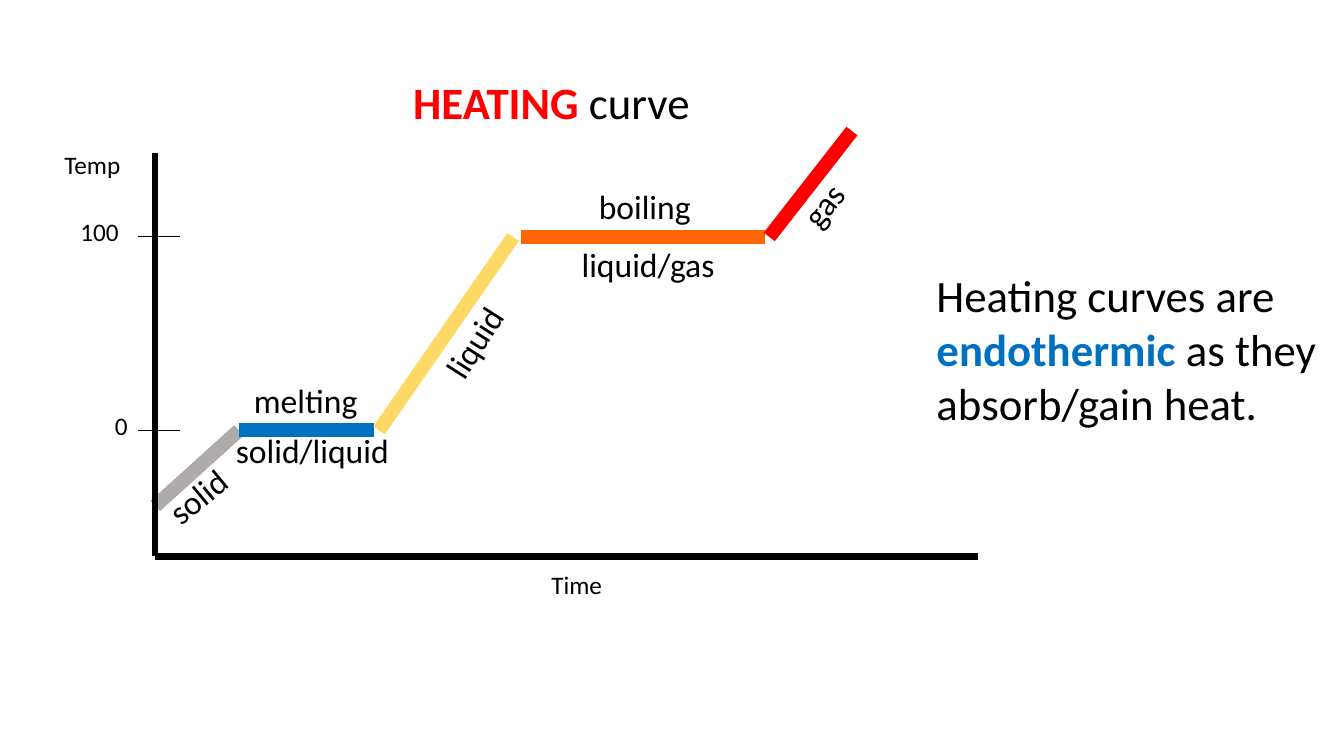
import pptx
import pptx.util
import pptx.dml.color
import pptx.enum.shapes
import pptx.enum.text
import pptx.oxml.ns
import lxml.etree
from pptx.util import Inches

FONT = "Calibri"
COLORS = {
    "black": "000000", "solid": "AFABAB", "melting": "0070C0",
    "liquid": "FFD966", "boiling": "FF6600", "gas": "FF0000",
}


def rgb(name):
    return pptx.dml.color.RGBColor.from_string(COLORS[name])


def add_line(s, start, end, color, width):
    line = s.shapes.add_connector(
        pptx.enum.shapes.MSO_CONNECTOR.STRAIGHT,
        *(Inches(v) for v in (*start, *end)))
    line.line.color.rgb = rgb(color)
    line.line.width = pptx.util.Pt(width)
    lxml.etree.SubElement(line._element.spPr, pptx.oxml.ns.qn("a:effectLst"))


def add_text(s, box, runs, size, wrap=False, rotation=0):
    """Add one paragraph; each run is (text, color name, bold)."""
    sp = s.shapes.add_textbox(*(Inches(v) for v in box))
    sp.rotation = rotation
    tf = sp.text_frame
    tf.word_wrap = wrap
    tf.auto_size = pptx.enum.text.MSO_AUTO_SIZE.SHAPE_TO_FIT_TEXT
    p = tf.paragraphs[0]
    for text, color, bold in runs:
        r = p.add_run()
        r.text = text
        r.font.name = FONT
        r.font.size = pptx.util.Pt(size)
        r.font.bold = bold
        r.font.color.rgb = rgb(color)


def add_axes(s, x, y, w, h):
    """Draw both axes, the two temperature ticks and the axis labels."""
    bottom = y + h
    add_line(s, (x, y), (x, bottom), "black", 4.5)
    add_line(s, (x, bottom), (x + w, bottom), "black", 4.5)
    for tick_y in (y + 2.75, y + 0.83):
        add_line(s, (x - 0.17, tick_y), (x + 0.25, tick_y), "black", 0.75)
    labels = [
        ("0", -0.5, 2.5, 0.37), ("100", -0.84, 0.58, 0.7),
        ("Time", 3.83, 4.08, 0.9), ("Temp", -1, -0.09, 0.98),
    ]
    for text, dx, dy, width in labels:
        add_text(s, (x + dx, y + dy, width, 0.5),
                 [(text, "black", False)], 18, wrap=True)


def add_curve(s, x, y):
    """Draw the phases and their labels from the top left of the axes."""
    melt, boil = 2.75, 0.83
    phases = [
        ("solid", (0, 3.5), (0.83, melt)),
        ("melting", (0.83, melt), (2.17, melt)),
        ("liquid", (2.22, melt), (3.55, boil)),
        ("boiling", (3.63, boil), (6.05, boil)),
        ("gas", (6.09, boil), (6.91, -0.22)),
    ]
    for color, (x1, y1), (x2, y2) in phases:
        add_line(s, (x + x1, y + y1), (x + x2, y + y2), color, 10)

    labels = [
        ("gas", 6.3, 0.26, 0.65, 308.1),
        ("liquid", 2.68, 1.62, 0.96, 302.5),
        ("melting", 0.88, 2.2, 1.24, 0),
        ("liquid/gas", 4.13, 0.85, 1.53, 0),
        ("solid", 0, 3.15, 0.84, 320.6),
        ("solid/liquid", 0.7, 2.7, 1.76, 0),
        ("boiling", 4.3, 0.28, 1.12, 0),
    ]
    for text, dx, dy, width, rotation in labels:
        add_text(s, (x + dx, y + dy, width, 0.5),
                 [(text, "black", False)], 24, rotation=rotation)


def add_title(s, box):
    add_text(s, box, [("HEATING", "gas", True), (" curve", "black", False)], 32)


def add_explanation(s, box):
    add_text(s, box, [
        ("Heating curves are ", "black", False),
        ("endothermic ", "melting", True),
        ("as they absorb/gain heat.", "black", False),
    ], 32, wrap=True)


def main():
    prs = pptx.Presentation()
    prs.slide_width, prs.slide_height = Inches(13.33), Inches(7.5)
    s = prs.slides.add_slide(prs.slide_layouts[6])
    left, top = 1.54, 1.52
    add_curve(s, left, top)
    add_axes(s, left, top, 8.16, 4)
    add_title(s, (4, 0.69, 3.07, 0.64))
    add_explanation(s, (9.19, 2.61, 3.97, 1.72))
    prs.save("out.pptx")


if __name__ == "__main__":
    main()
